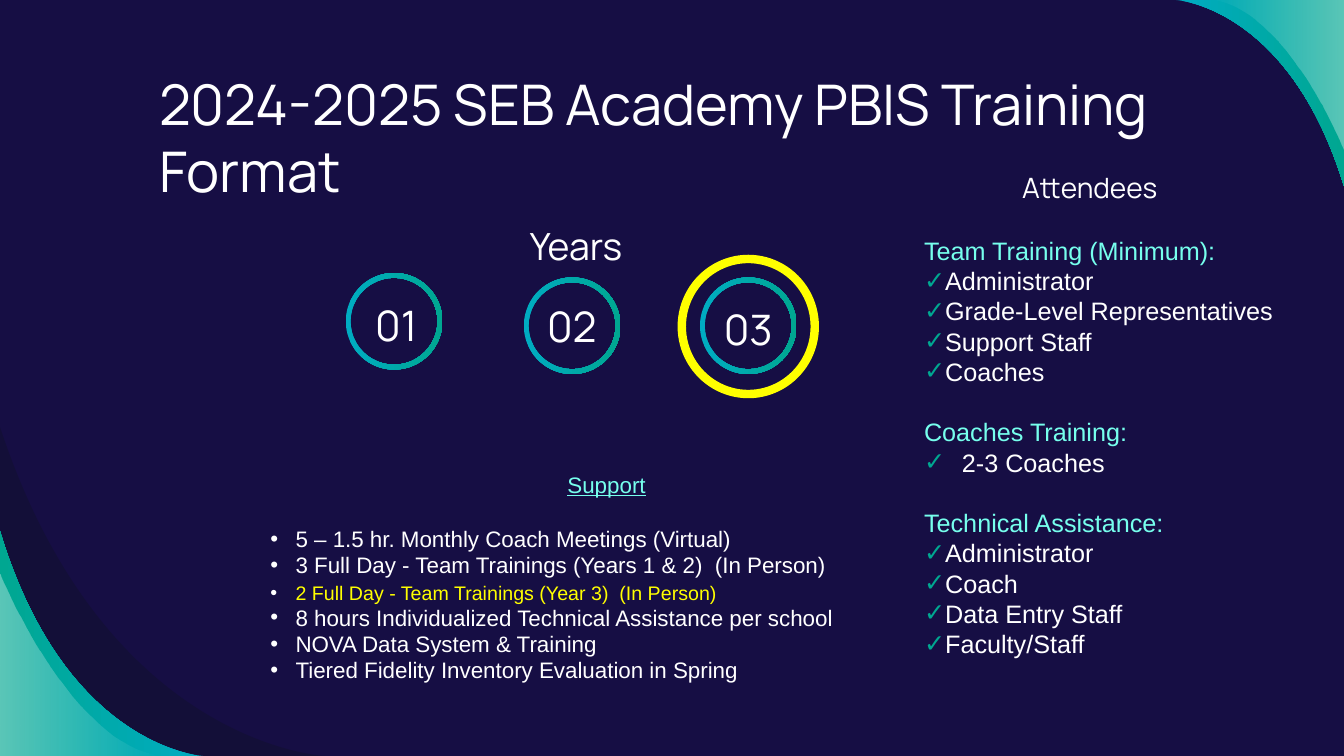
from dataclasses import dataclass

from lxml.etree import SubElement
from pptx import Presentation
from pptx.dml.color import RGBColor
from pptx.enum.shapes import MSO_SHAPE
from pptx.enum.text import MSO_ANCHOR, PP_ALIGN
from pptx.oxml.ns import qn
from pptx.util import Pt


@dataclass(frozen=True)
class Theme:
    back: str = "160E44"
    dark: str = "12102F"
    white: str = "FFFFFF"
    blue: str = "00ACC2"
    green: str = "00A791"
    mint: str = "76FFED"
    yellow: str = "FFFF00"
    head: str = "Manrope"
    body: str = "Arial"
    title: float = 40
    digit: float = 30
    years: float = 26.7
    label: float = 20
    large: float = 18
    base: float = 16
    small: float = 14


T = Theme()
WIDE, HIGH = 960, 540
RING = 69
BULLET, CHECK = "•", "✓"

# Number, ring left and top, text left and top
STEPS = [
    ("01", 247, 195, 221.5, 209.5),
    ("02", 374.2, 198.2, 347, 210.5),
    ("03", 500, 198.2, 473, 212),
]

SUPPORT = [
    ("5 – 1.5 hr. Monthly Coach Meetings (Virtual)", T.white, T.base),
    ("3 Full Day - Team Trainings (Years 1 & 2)  (In Person)", T.white, T.base),
    ("2 Full Day - Team Trainings (Year 3)  (In Person)", T.yellow, T.small),
    ("8 hours Individualized Technical Assistance per school", T.white, T.base),
    ("NOVA Data System & Training", T.white, T.base),
    ("Tiered Fidelity Inventory Evaluation in Spring", T.white, T.base),
]

# Heading, indent of its list, people
GROUPS = [
    ("Team Training (Minimum):", 13.5,
     ["Administrator", "Grade-Level Representatives", "Support Staff", "Coaches"]),
    ("Coaches Training:", 27, ["2-3 Coaches"]),
    ("Technical Assistance:", 13.5,
     ["Administrator", "Coach", "Data Entry Staff", "Faculty/Staff"]),
]


def fade(shape, clear):
    """Set the opacity of each colour in percent."""
    tints = list(shape.element.spPr.iter(qn("a:srgbClr")))
    for tint, part in zip(tints, clear):
        SubElement(tint, qn("a:alpha"), val=str(part * 1000))


def paint(shape, first, last, angle=0, clear=()):
    shape.shadow.inherit = False
    shape.line.fill.background()
    shape.fill.gradient()
    shape.fill.gradient_angle = angle
    for stop, tint in zip(shape.fill.gradient_stops, (first, last)):
        stop.color.rgb = RGBColor.from_string(tint)
    fade(shape, clear)


def curve(slide, start, pull, push, end, corner):
    """Corner patch bounded by one cubic curve."""
    spots = [(Pt(x), Pt(y)) for x, y in (pull, push, end, corner)]
    form = slide.shapes.build_freeform(Pt(start[0]), Pt(start[1]), scale=1)
    form.add_line_segments(spots, close=True)
    shape = form.convert_to_shape()
    lines = list(shape.element.spPr.iter(qn("a:lnTo")))[:3]
    bend = lines[0].makeelement(qn("a:cubicBezTo"))
    lines[0].addprevious(bend)
    for line in lines:
        bend.append(line[0])
        line.getparent().remove(line)
    return shape


def frame(slide, left, top, width, height, side=7.2, edge=7.2,
          anchor=MSO_ANCHOR.TOP):
    box = slide.shapes.add_textbox(Pt(left), Pt(top), Pt(width), Pt(height))
    text = box.text_frame
    text.word_wrap = True
    text.vertical_anchor = anchor
    text.margin_left = text.margin_right = Pt(side)
    text.margin_top = text.margin_bottom = Pt(edge)
    return text


def write(para, words, size, tint=T.white, font=T.head, align=PP_ALIGN.LEFT):
    para.alignment = align
    run = para.add_run()
    run.text = words
    run.font.size = Pt(size)
    run.font.name = font
    run.font.color.rgb = RGBColor.from_string(tint)
    return run


def mark(para, sign, tint, indent):
    props = para._p.get_or_add_pPr()
    props.set("marL", str(Pt(indent)))
    props.set("indent", str(-Pt(indent)))
    SubElement(SubElement(props, qn("a:buClr")), qn("a:srgbClr"), val=tint)
    SubElement(props, qn("a:buFont"), typeface=T.body)
    SubElement(props, qn("a:buChar"), char=sign)


def label(slide, words, size, left, top, width, anchor):
    text = frame(slide, left, top, width, 45, anchor=anchor)
    write(text.paragraphs[0], words, size, align=PP_ALIGN.CENTER)


def corners(slide):
    low, high = (0, HIGH), (WIDE, 0)
    paint(curve(slide, (840, 0), (840, 0), (921, 4.5), (960, 133), high),
          T.blue, T.green)
    paint(curve(slide, (960, 107), (960, 107), (920, 6.5), (865, 0), high),
          T.white, T.white, clear=(0, 36))
    shade = curve(slide, (0, 305), (75, 533), (232, 540), (232, 540), low)
    shade.shadow.inherit = False
    shade.line.fill.background()
    shade.fill.solid()
    shade.fill.fore_color.rgb = RGBColor.from_string(T.dark)
    fade(shade, [54])
    paint(curve(slide, (145, 540), (145, 540), (47, 535), (0, 379.5), low),
          T.blue, T.green, angle=180)
    paint(curve(slide, (0, 410.5), (0, 410.5), (49, 532), (115, 540), low),
          T.white, T.white, angle=180, clear=(0, 36))


def steps(slide):
    for digit, left, top, x, y in STEPS:
        ring = slide.shapes.add_shape(
            MSO_SHAPE.DONUT, Pt(left), Pt(top), Pt(RING), Pt(RING))
        ring.adjustments[0] = 0.05
        paint(ring, T.blue, T.green)
        label(slide, digit, T.digit, x, y, 123, MSO_ANCHOR.MIDDLE)
    halo = slide.shapes.add_shape(
        MSO_SHAPE.OVAL, Pt(487), Pt(185), Pt(95), Pt(96.5))
    halo.shadow.inherit = False
    halo.fill.background()
    halo.line.color.rgb = RGBColor.from_string(T.yellow)
    halo.line.width = Pt(6)


def support(slide):
    text = frame(slide, 186, 329, 494.5, 103.5)
    run = write(text.paragraphs[0], "Support", T.base, T.mint, T.body,
                PP_ALIGN.CENTER)
    run.font.underline = True
    for spot, (words, tint, size) in enumerate(SUPPORT):
        para = text.add_paragraph()
        para.line_spacing = Pt(18.8)
        para.space_before = Pt(0 if spot else 20)
        mark(para, BULLET, T.white, 18)
        write(para, words, size, tint, T.body)


def people(slide):
    pitch = 21.6
    text = frame(slide, 653, 161, 283, 312.5, edge=7)
    para = text.paragraphs[0]
    for spot, (head, indent, names) in enumerate(GROUPS):
        if spot:
            para = text.add_paragraph()
            para.space_before = Pt(pitch)
        para.line_spacing = Pt(pitch)
        write(para, head, T.large, T.mint, T.body)
        for name in names:
            para = text.add_paragraph()
            para.line_spacing = Pt(pitch)
            mark(para, CHECK, T.green, indent)
            write(para, name, T.large, T.white, T.body)


def main():
    deck = Presentation()
    deck.slide_width, deck.slide_height = Pt(WIDE), Pt(HIGH)
    slide = deck.slides.add_slide(deck.slide_layouts[6])
    slide.background.fill.solid()
    slide.background.fill.fore_color.rgb = RGBColor.from_string(T.back)

    # Corner art
    corners(slide)

    # Title
    title = frame(slide, 106.5, 42.5, 746.5, 49.5)
    write(title.paragraphs[0], "2024-2025 SEB Academy PBIS Training Format",
          T.title)

    # Years and support
    label(slide, "Years", T.years, 350, 153.5, 123, MSO_ANCHOR.BOTTOM)
    steps(slide)
    support(slide)

    # Attendees
    label(slide, "Attendees", T.label, 677.5, 108, 202, MSO_ANCHOR.BOTTOM)
    people(slide)

    deck.save("out.pptx")


if __name__ == "__main__":
    main()
